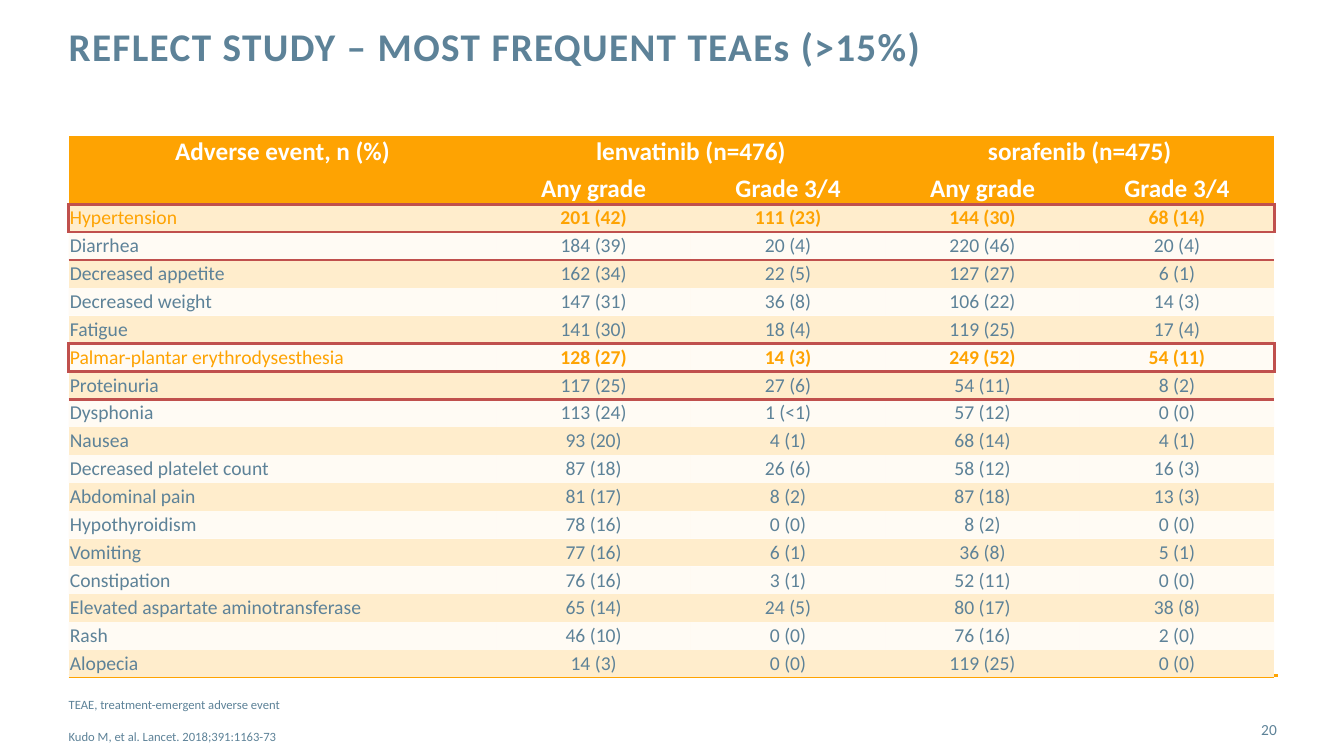
from lxml.etree import SubElement
from pptx import Presentation
from pptx.dml.color import RGBColor
from pptx.enum.shapes import MSO_CONNECTOR as Connector
from pptx.enum.text import MSO_ANCHOR as Anchor, MSO_AUTO_SIZE as AutoSize, PP_ALIGN as Align
from pptx.oxml.ns import qn
from pptx.util import Cm, Pt

COLORS = {
    "slate": "5D8298",
    "orange": "FEA302",
    "rule": "FFA402",
    "cream": "FFEDCC",
    "red": "C0504D",
    "white": "FFFFFF",
}
FONT = "Calibri"
LEFT = 1.73
PLAIN_TABLE_STYLE = "{2D5ABB26-0587-4C30-8999-92F81FD0307C}"
COLUMN_WIDTHS = [10.78] + [4.9] * 4
HEADER_HEIGHTS = [0.94, 0.76]
EVENT_HEIGHT = 0.7
HEADERS = [
    ["Adverse event, n (%)", "lenvatinib (n=476)", "", "sorafenib (n=475)", ""],
    ["", "Any grade", "Grade 3/4", "Any grade", "Grade 3/4"],
]
EVENTS = [
    ["Hypertension", "201 (42)", "111 (23)", "144 (30)", "68 (14)"],
    ["Diarrhea", "184 (39)", "20 (4)", "220 (46)", "20 (4)"],
    ["Decreased appetite", "162 (34)", "22 (5)", "127 (27)", "6 (1)"],
    ["Decreased weight", "147 (31)", "36 (8)", "106 (22)", "14 (3)"],
    ["Fatigue", "141 (30)", "18 (4)", "119 (25)", "17 (4)"],
    ["Palmar-plantar erythrodysesthesia", "128 (27)", "14 (3)", "249 (52)", "54 (11)"],
    ["Proteinuria", "117 (25)", "27 (6)", "54 (11)", "8 (2)"],
    ["Dysphonia", "113 (24)", "1 (<1)", "57 (12)", "0 (0)"],
    ["Nausea", "93 (20)", "4 (1)", "68 (14)", "4 (1)"],
    ["Decreased platelet count", "87 (18)", "26 (6)", "58 (12)", "16 (3)"],
    ["Abdominal pain", "81 (17)", "8 (2)", "87 (18)", "13 (3)"],
    ["Hypothyroidism", "78 (16)", "0 (0)", "8 (2)", "0 (0)"],
    ["Vomiting", "77 (16)", "6 (1)", "36 (8)", "5 (1)"],
    ["Constipation", "76 (16)", "3 (1)", "52 (11)", "0 (0)"],
    ["Elevated aspartate aminotransferase", "65 (14)", "24 (5)", "80 (17)", "38 (8)"],
    ["Rash", "46 (10)", "0 (0)", "76 (16)", "2 (0)"],
    ["Alopecia", "14 (3)", "0 (0)", "119 (25)", "0 (0)"],
]
HIGHLIGHTED = {"Hypertension", "Palmar-plantar erythrodysesthesia"}


def rgb(name):
    return RGBColor.from_string(COLORS[name])


def format_paragraph(para, size, color, bold=False, align=Align.LEFT):
    para.alignment = align
    for span in para.runs:
        font = span.font
        font.name, font.size, font.bold = FONT, Pt(size), bold
        font.color.rgb = rgb(color)


def place(box, left, top, width, height, anchor):
    """Position a text shape and strip its insets."""
    box.left, box.top, box.width, box.height = Cm(left), Cm(top), Cm(width), Cm(height)
    frame = box.text_frame
    frame.margin_left = frame.margin_right = frame.margin_top = frame.margin_bottom = 0
    frame.word_wrap = True
    frame.auto_size = AutoSize.NONE
    frame.vertical_anchor = anchor
    return frame


def add_title(page):
    frame = place(page.shapes.title, LEFT, 0.69, 24.28, 2.24, Anchor.TOP)
    frame.text = "REFLECT STUDY – MOST FREQUENT TEAEs (>15%)"
    para = frame.paragraphs[0]
    para.line_spacing = Pt(30)
    format_paragraph(para, 28, "slate", bold=True)
    para.runs[0].font._element.set("spc", "100")


def add_footnotes(page):
    frame = place(page.placeholders[1], LEFT, 17.65, 22.56, 1.02, Anchor.MIDDLE)
    frame.text = "TEAE, treatment-emergent adverse event\nKudo M, et al. Lancet. 2018;391:1163-73"
    for index, para in enumerate(frame.paragraphs):
        properties = para._p.get_or_add_pPr()
        properties.set("marL", "0")
        properties.set("indent", "0")
        SubElement(properties, qn("a:buNone"))
        para.space_before = Pt(12 if index else 0)
        format_paragraph(para, 9, "slate")


def add_page_number(page):
    box = page.shapes.add_textbox(0, 0, 0, 0)
    frame = place(box, 30, 17.86, 2.18, 1.02, Anchor.MIDDLE)
    frame.text = "20"
    format_paragraph(frame.paragraphs[0], 11, "slate", align=Align.RIGHT)


def add_rule(page):
    rule = page.shapes.add_connector(Connector.STRAIGHT, Cm(LEFT), Cm(17.02), Cm(32.21), Cm(17.02))
    rule.line.color.rgb = rgb("rule")
    rule.line.width = Pt(2)
    SubElement(rule._element.spPr, qn("a:effectLst"))


def add_border(cell, side, color, width):
    properties = cell._tc.get_or_add_tcPr()
    line = SubElement(properties, qn(f"a:ln{side}"), w=str(Pt(width)))
    SubElement(SubElement(line, qn("a:solidFill")), qn("a:srgbClr"), val=COLORS[color])


def fill_cell(cell, color, opacity=100):
    cell.fill.solid()
    cell.fill.fore_color.rgb = rgb(color)
    if opacity < 100:
        tint = next(cell._tc.tcPr.find(qn("a:solidFill")).iter(qn("a:srgbClr")))
        SubElement(tint, qn("a:alpha"), val=str(opacity * 1000))


def set_margins(cell, side, end):
    cell.margin_left = cell.margin_right = Cm(side)
    cell.margin_top = cell.margin_bottom = Cm(end)


def outline_cell(cell, row, column, rows):
    """Box the highlighted rows in red and close the table with a thin line."""
    boxed = [index for index, texts in enumerate(rows) if texts[0] in HIGHLIGHTED]
    if row in boxed and column == 0:
        add_border(cell, "L", "red", 2.25)
    if row in boxed and column == len(COLUMN_WIDTHS) - 1:
        add_border(cell, "R", "red", 2.25)
    if row in boxed or row - 1 in boxed:
        add_border(cell, "T", "red", 2.25)
    if row in boxed or row + 1 in boxed:
        add_border(cell, "B", "red", 2.25)
    elif row == len(rows) - 1:
        add_border(cell, "B", "orange", 1)


def format_header(cell):
    set_margins(cell, 0.08, 0)
    fill_cell(cell, "orange")
    format_paragraph(cell.text_frame.paragraphs[0], 18, "white", True, Align.CENTER)


def format_event(cell, column, highlighted, shaded):
    set_margins(cell, 0.03, 0.05)
    cell.vertical_anchor = Anchor.BOTTOM
    fill_cell(cell, "cream", 100 if shaded else 20)
    format_paragraph(
        cell.text_frame.paragraphs[0], 14,
        "orange" if highlighted else "slate",
        bold=highlighted and column > 0,
        align=Align.CENTER if column else Align.LEFT,
    )


def add_event_table(page):
    rows = HEADERS + EVENTS
    heights = HEADER_HEIGHTS + [EVENT_HEIGHT] * len(EVENTS)
    frame = page.shapes.add_table(
        len(rows), len(COLUMN_WIDTHS), Cm(LEFT), Cm(3.43), Cm(sum(COLUMN_WIDTHS)), Cm(sum(heights)))
    next(frame._element.iter(qn("a:tableStyleId"))).text = PLAIN_TABLE_STYLE
    table = frame.table
    table.first_row = table.horz_banding = False
    for column, width in zip(table.columns, COLUMN_WIDTHS):
        column.width = Cm(width)
    for row, texts in enumerate(rows):
        table.rows[row].height = Cm(heights[row])
        for column, text in enumerate(texts):
            cell = table.cell(row, column)
            cell.text = text
            outline_cell(cell, row, column, rows)
            if row < len(HEADERS):
                format_header(cell)
            else:
                format_event(cell, column, texts[0] in HIGHLIGHTED, row % 2 == 0)
    for column in (1, 3):
        table.cell(0, column).merge(table.cell(0, column + 1))


def main():
    deck = Presentation()
    deck.slide_width, deck.slide_height = Cm(33.87), Cm(19.05)
    page = deck.slides.add_slide(deck.slide_layouts[1])
    add_rule(page)
    add_event_table(page)
    add_title(page)
    add_footnotes(page)
    add_page_number(page)
    deck.save("out.pptx")


if __name__ == "__main__":
    main()
